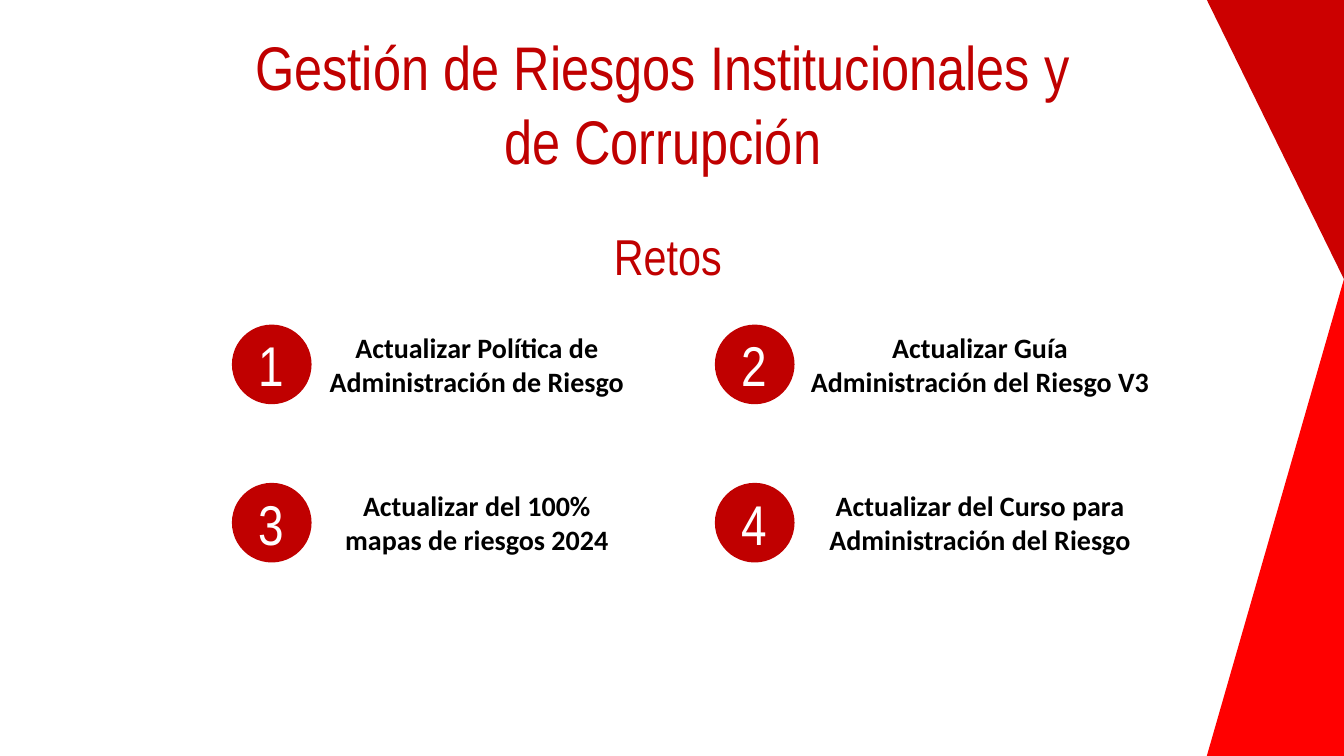
from pptx import Presentation
from pptx.dml.color import RGBColor
from pptx.enum.shapes import MSO_SHAPE as SHAPE
from pptx.enum.text import MSO_ANCHOR as ANCHOR, MSO_AUTO_SIZE as AUTO, PP_ALIGN as ALIGN
from pptx.util import Inches, Pt

DARK_RED = RGBColor(0xC0, 0x00, 0x00)
EDGE_RED = RGBColor(0xCC, 0x00, 0x00)
BRIGHT_RED = RGBColor(0xFF, 0x00, 0x00)
WHITE = RGBColor(0xFF, 0xFF, 0xFF)
BLACK = RGBColor(0x00, 0x00, 0x00)

prs = Presentation()
prs.slide_width, prs.slide_height = Inches(13.33), Inches(7.5)
s = prs.slides.add_slide(prs.slide_layouts[5])


def add_solid(preset, left, top, width, height, color):
    sp = s.shapes.add_shape(preset, Inches(left), Inches(top), Inches(width), Inches(height))
    sp.shadow.inherit = False
    sp.fill.solid()
    sp.fill.fore_color.rgb = color
    sp.line.fill.background()
    return sp


def write(sp, text, size, font, color, bold=False, anchor=ANCHOR.TOP):
    tf = sp.text_frame
    tf.word_wrap = True
    tf.auto_size = AUTO.NONE
    tf.vertical_anchor = anchor
    tf.text = text
    p = tf.paragraphs[0]
    p.alignment = ALIGN.CENTER
    f = p.runs[0].font
    f.size, f.name, f.bold = Pt(size), font, bold
    f.color.rgb = color


# Right edge
lower = add_solid(SHAPE.RIGHT_TRIANGLE, 11.97, 2.77, 1.36, 4.73, BRIGHT_RED)
lower._element.spPr.xfrm.set("flipH", "1")
upper = add_solid(SHAPE.RIGHT_TRIANGLE, 11.97, 0, 1.36, 2.77, EDGE_RED)
upper.rotation = 180

# Headings
title = s.shapes.title
title.left, title.top = Inches(2.38), Inches(0.24)
title.width, title.height = Inches(8.39), Inches(1.58)
write(title, "Gestión de Riesgos Institucionales y de Corrupción", 44, "Arial Narrow", DARK_RED)
subtitle = s.shapes.add_textbox(Inches(5.72), Inches(2.18), Inches(1.92), Inches(0.71))
write(subtitle, "Retos ", 36, "Arial Narrow", DARK_RED)

# Numbered challenges, two per row
challenges = [
    "Actualizar Política de Administración de Riesgo",
    "Actualizar Guía Administración del Riesgo V3",
    "Actualizar del 100% mapas de riesgos 2024",
    "Actualizar del Curso para Administración del Riesgo",
]
label_widths = [3.16, 3.56]
for i, challenge in enumerate(challenges):
    row, col = divmod(i, 2)
    left, top = 2.3 + 4.79 * col, 3.22 + 1.57 * row
    label = s.shapes.add_textbox(Inches(left + 0.85), Inches(top + 0.01),
                                 Inches(label_widths[col]), Inches(0.77))
    write(label, challenge, 20, "Calibri", BLACK, bold=True)
    circle = add_solid(SHAPE.OVAL, left, top, 0.79, 0.79, DARK_RED)
    write(circle, str(i + 1), 40, "Arial Narrow", WHITE, anchor=ANCHOR.MIDDLE)

prs.save("out.pptx")
